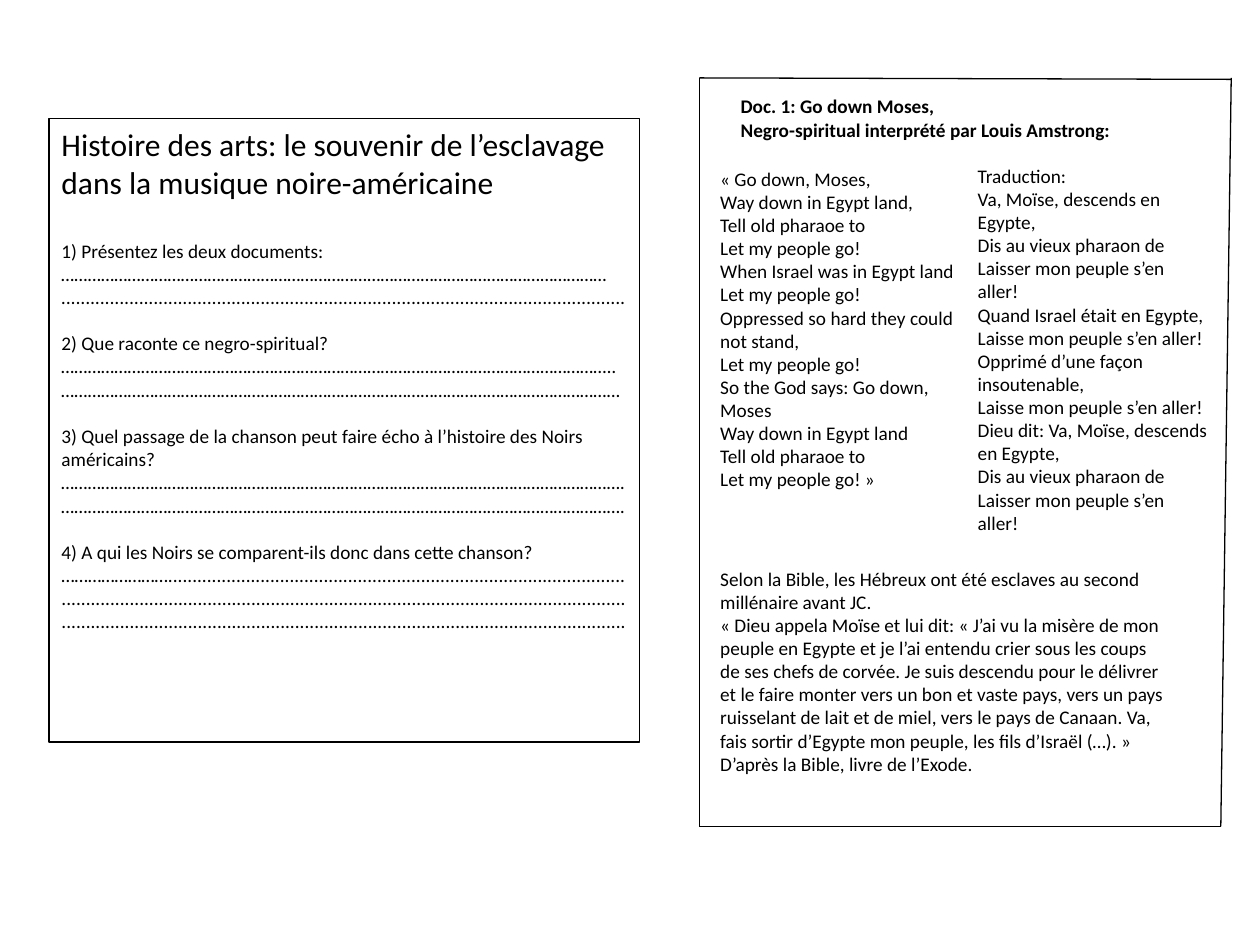
from dataclasses import dataclass

from pptx import Presentation
from pptx.dml.color import RGBColor
from pptx.enum.shapes import MSO_CONNECTOR as Connector, MSO_SHAPE as Shape
from pptx.enum.text import MSO_ANCHOR as Anchor, PP_ALIGN as Align
from pptx.oxml.ns import qn
from pptx.util import Cm, Pt


@dataclass(frozen=True)
class Theme:
    font: str = "Calibri"
    ink: RGBColor = RGBColor(0, 0, 0)
    title: int = 18
    body: int = 11
    line: float = 0.75
    title_gap: float = 22
    body_gap: float = 13.4  # one line of body text


THEME = Theme()
TITLE = "Histoire des arts: le souvenir de l’esclavage dans la musique noire-américaine"

# Each question: wording, answer lines, italic answers
QUESTIONS = [
    ("1) Présentez les deux documents:", ["…" * 41, "." * 116], True),
    ("2) Que raconte ce negro-spiritual?", ["…" * 41 + "..", "…" * 42], True),
    ("3) Quel passage de la chanson peut faire écho à l’histoire des Noirs américains?",
     ["…" * 42 + "."] * 2, True),
    ("4) A qui les Noirs se comparent-ils donc dans cette chanson?",
     ["…" * 8 + "." * 326], False),
]

HEADING = ["Doc. 1: Go down Moses,", "Negro-spiritual interprété par Louis Amstrong:"]

LYRICS = [
    "« Go down, Moses,",
    "Way down in Egypt land,",
    "Tell old pharaoe to",
    "Let my people go!",
    "When Israel was in Egypt land",
    "Let my people go!",
    "Oppressed so hard they could not stand,",
    "Let my people go!",
    "So the God says: Go down, Moses",
    "Way down in Egypt land",
    "Tell old pharaoe to",
    "Let my people go! »",
]

TRANSLATION = [
    "Traduction:",
    "Va, Moïse, descends en Egypte,",
    "Dis au vieux pharaon de",
    "Laisser mon peuple s’en aller!",
    "Quand Israel était en Egypte,",
    "Laisse mon peuple s’en aller!",
    "Opprimé d’une façon insoutenable,",
    "Laisse mon peuple s’en aller!",
    "Dieu dit: Va, Moïse, descends en Egypte,",
    "Dis au vieux pharaon de",
    "Laisser mon peuple s’en aller!",
]

BIBLE = [
    "Selon la Bible, les Hébreux ont été esclaves au second millénaire avant JC.",
    "« Dieu appela Moïse et lui dit: « J’ai vu la misère de mon peuple en Egypte "
    "et je l’ai entendu crier sous les coups de ses chefs de corvée. Je suis descendu "
    "pour le délivrer et le faire monter vers un bon et vaste pays, vers un pays "
    "ruisselant de lait et de miel, vers le pays de Canaan. Va, fais sortir d’Egypte "
    "mon peuple, les fils d’Israël (…). »",
    "D’après la Bible, livre de l’Exode.",
]


def write(frame, text, size=THEME.body, bold=False, italic=False, before=0):
    """Add one paragraph, using the empty first one when there is no text yet."""
    para = frame.add_paragraph() if frame.text else frame.paragraphs[0]
    para.alignment = Align.LEFT
    para.space_before = Pt(before)
    span = para.add_run()
    span.text = text
    font = span.font
    font.name, font.size = THEME.font, Pt(size)
    font.bold, font.italic = bold, italic
    font.color.rgb = THEME.ink


def add_text(page, left, top, width, height, lines, bold=False, margin_top=0.13):
    box = page.shapes.add_textbox(Cm(left), Cm(top), Cm(width), Cm(height))
    frame = box.text_frame
    frame.word_wrap = True
    frame.margin_top = Cm(margin_top)
    for line in lines:
        write(frame, line, bold=bold)


def add_panel(page, left, top, width, height):
    panel = page.shapes.add_shape(Shape.RECTANGLE, Cm(left), Cm(top), Cm(width), Cm(height))
    panel.shadow.inherit = False
    panel.fill.background()
    panel.line.color.rgb = THEME.ink
    panel.line.width = Pt(THEME.line)
    frame = panel.text_frame
    frame.word_wrap = True
    frame.vertical_anchor = Anchor.TOP
    return frame


def add_line(page, start, end):
    line = page.shapes.add_connector(Connector.STRAIGHT, *map(Cm, start + end))
    line.line.color.rgb = THEME.ink
    line.line.width = Pt(THEME.line)
    properties = line.element.spPr
    properties.append(properties.makeelement(qn("a:effectLst"), {}))


def add_questions(page):
    frame = add_panel(page, 0.99, 2.39, 11.91, 12.57)
    write(frame, TITLE, size=THEME.title)
    for index, (question, answers, italic) in enumerate(QUESTIONS):
        write(frame, question, before=THEME.body_gap if index else THEME.title_gap)
        for answer in answers:
            write(frame, answer, italic=italic)


def add_document(page):
    add_text(page, 19.46, 3.18, 5.16, 7.77, TRANSLATION)
    add_text(page, 14.27, 2.77, 5.77, 7.32, LYRICS, margin_top=0.6)
    add_text(page, 14.27, 11.3, 9.53, 4.5, BIBLE)
    add_text(page, 14.68, 1.78, 9.12, 1.96, HEADING, bold=True)

    # Hand-drawn frame, slightly out of square
    top_left, top_right = (14.1, 1.57), (24.82, 1.57)
    bottom_left, bottom_right = (14.1, 16.66), (24.61, 16.66)
    add_line(page, top_left, (24.82, 1.6))
    add_line(page, top_left, bottom_left)
    add_line(page, bottom_left, bottom_right)
    add_line(page, top_right, bottom_right)


def main():
    deck = Presentation()
    deck.slide_width, deck.slide_height = Cm(25.4), Cm(19.05)
    page = deck.slides.add_slide(deck.slide_layouts[6])
    add_questions(page)
    add_document(page)
    deck.save("out.pptx")


if __name__ == "__main__":
    main()
